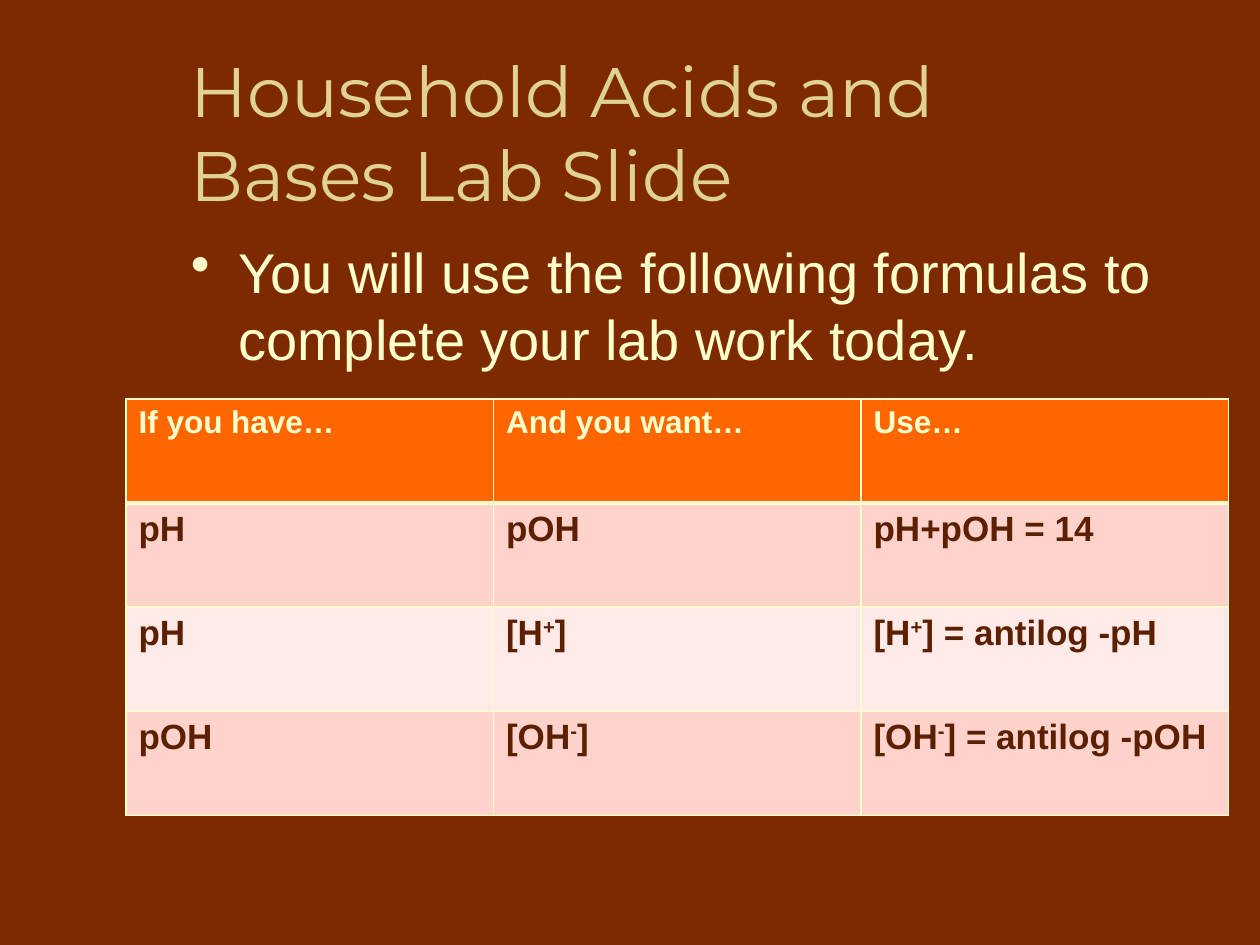
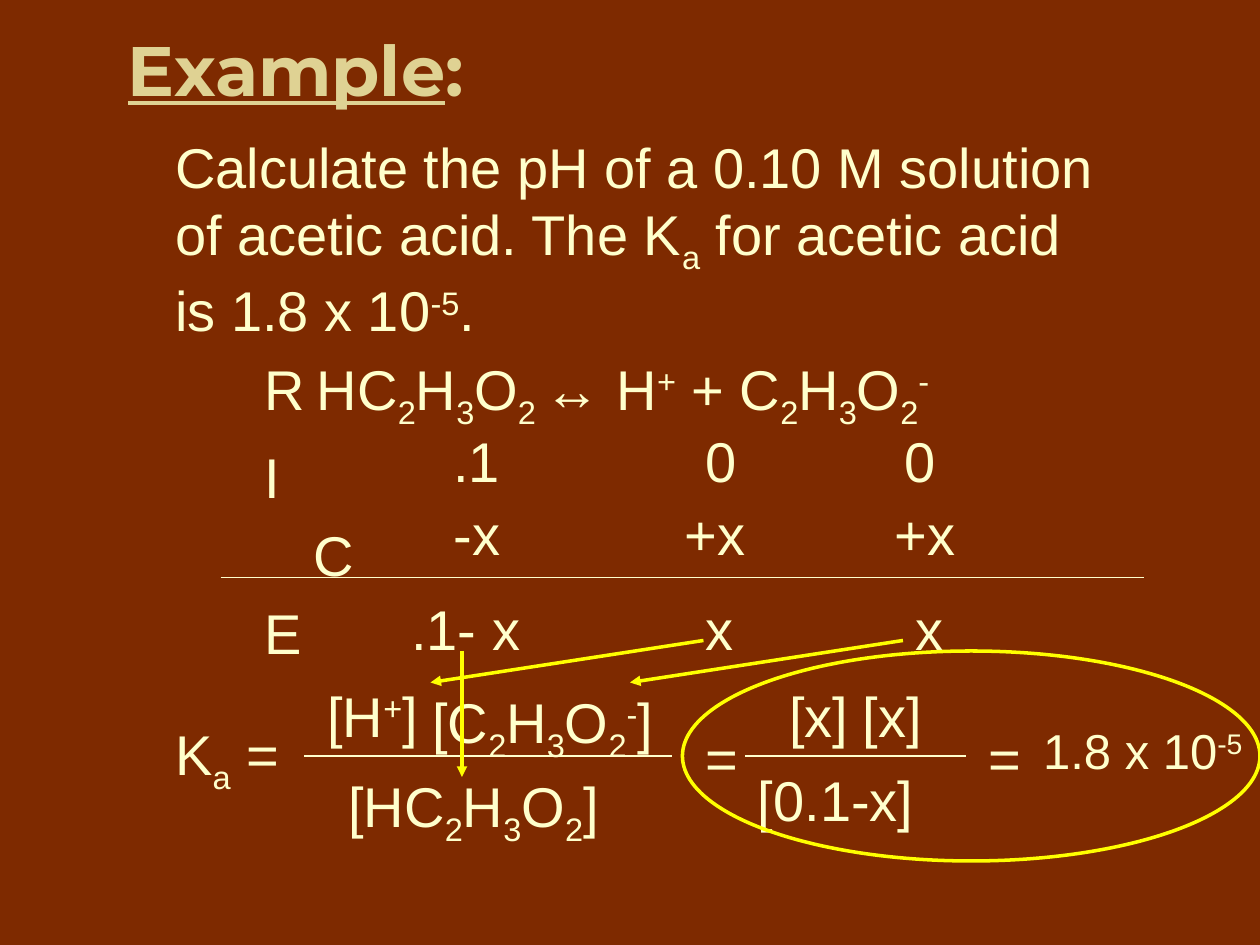
from pptx import Presentation
from pptx.dml.color import RGBColor
from pptx.enum.shapes import MSO_CONNECTOR, MSO_SHAPE
from pptx.enum.text import MSO_ANCHOR
from pptx.oxml.ns import qn
from pptx.util import Pt
from lxml import etree

BACK = RGBColor(0x7E, 0x2A, 0x00)
GOLD = RGBColor(0xDF, 0xD2, 0x93)
CREAM = RGBColor(0xFF, 0xFF, 0xCC)
ORANGE = RGBColor(0xFF, 0x66, 0x00)
ROSE = RGBColor(0xFF, 0xD3, 0xCC)
BLUSH = RGBColor(0xFF, 0xEA, 0xE7)
BROWN = RGBColor(0x5C, 0x1F, 0x00)
YELLOW = RGBColor(0xFF, 0xFF, 0x00)

STRAIGHT = MSO_CONNECTOR.STRAIGHT
OVAL = MSO_SHAPE.OVAL
TOP, MIDDLE = MSO_ANCHOR.TOP, MSO_ANCHOR.MIDDLE
HEAD_FONT, BODY_FONT = "Montserrat", "Arial"
BASE = {"_": "-25000", "^": "30000"}


# Shared parts
def add_slide(deck):
    slide = deck.slides.add_slide(deck.slide_layouts[6])
    slide.background.fill.solid()
    slide.background.fill.fore_color.rgb = BACK
    return slide


def add_sub(parent, tag, **attrs):
    return etree.SubElement(parent, qn(tag), attrs)


def set_font(para, size, color, name=BODY_FONT, bold=False):
    font = para.font
    font.name, font.size, font.bold = name, Pt(size), bold
    font.color.rgb = color


def add_runs(para, text):
    """Parts are split by |; a leading _ lowers a part, ^ raises it."""
    for part in text.split("|"):
        run = para.add_run()
        run.text = part.lstrip("_^")
        if part[0] in BASE:
            run._r.get_or_add_rPr().set("baseline", BASE[part[0]])


def add_box(slide, box, anchor=TOP, wrap=True):
    frame = slide.shapes.add_textbox(*map(Pt, box)).text_frame
    frame.word_wrap = wrap
    frame.vertical_anchor = anchor
    return frame


def add_text(slide, box, text, size=32, space=1.0, wrap=True):
    para = add_box(slide, box, wrap=wrap).paragraphs[0]
    add_runs(para, text)
    para.line_spacing = space
    set_font(para, size, CREAM)


def add_title(slide, box, text, bold=False):
    para = add_box(slide, box, MIDDLE).paragraphs[0]
    add_runs(para, text)
    set_font(para, 40, GOLD, HEAD_FONT, bold)
    return para


def add_line(slide, ends, color=CREAM, width=0.75, arrow=False):
    line = slide.shapes.add_connector(STRAIGHT, *map(Pt, ends))
    line.line.color.rgb = color
    line.line.width = Pt(width)
    if arrow:
        add_sub(line.line._get_or_add_ln(), "a:tailEnd", type="triangle")
    add_sub(line._element.spPr, "a:effectLst")


# Formula table
ROWS = [
    ["If you have…", "And you want…", "Use…"],
    ["pH", "pOH", "pH+pOH = 14"],
    ["pH", "[H|^+|]", "[H|^+|] = antilog -pH"],
    ["pOH", "[OH|^-|]", "[OH|^-|] = antilog -pOH"],
]


def add_edges(cell, row):
    props = cell._tc.get_or_add_tcPr()
    wide = {"T": row == 1, "B": row == 0}
    for side in "LRTB":
        width = Pt(3 if wide.get(side) else 1)
        edge = add_sub(props, f"a:ln{side}", w=str(width))
        fill = add_sub(edge, "a:solidFill")
        add_sub(fill, "a:srgbClr", val=str(CREAM))


def add_grid(slide, box):
    grid = slide.shapes.add_table(len(ROWS), len(ROWS[0]), *map(Pt, box)).table
    for r, row in enumerate(ROWS):
        grid.rows[r].height = Pt(box[3] / len(ROWS))
        for c, text in enumerate(row):
            cell = grid.cell(r, c)
            add_edges(cell, r)
            cell.fill.solid()
            cell.fill.fore_color.rgb = ORANGE if r == 0 else ROSE if r % 2 else BLUSH
            para = cell.text_frame.paragraphs[0]
            add_runs(para, text)
            size, color = (18, CREAM) if r == 0 else (20, BROWN)
            set_font(para, size, color, bold=True)


def lab_slide(deck):
    slide = add_slide(deck)
    add_title(slide, (102, 36, 564, 78), "Household Acids and Bases Lab Slide")
    para = add_box(slide, (102, 132, 564, 90)).paragraphs[0]
    add_runs(para, "You will use the following formulas to complete your lab work today.")
    props = para._p.get_or_add_pPr()
    props.set("marL", str(Pt(27)))
    props.set("indent", str(Pt(-27)))
    add_sub(props, "a:buChar", char="•")
    set_font(para, 32, CREAM)
    add_grid(slide, (72, 228, 630, 238))


# Problem text and row letters: text, left margin, first-line indent
STEPS = [
    ("Calculate the pH of a 0.10 M solution of acetic acid. The K|_a"
     "| for acetic acid is 1.8 x 10|^-5|.", 27, 0),
    ("R\tHC|_2|H|_3|O|_2 |↔ H|^+| + C|_2|H|_3|O|_2|^-", 0, 78),
    ("I", 0, 78),
    ("C", 0, 106),
    ("E", 0, 78),
]


def add_steps(slide, box):
    frame = add_box(slide, box)
    for i, (text, left, first) in enumerate(STEPS):
        para = frame.add_paragraph() if i else frame.paragraphs[0]
        add_runs(para, text)
        props = para._p.get_or_add_pPr()
        props.set("marL", str(Pt(left)))
        props.set("indent", str(Pt(first)))
        if "\t" in text:
            tabs = add_sub(props, "a:tabLst")
            add_sub(tabs, "a:tab", pos=str(Pt(146)), algn="l")
        para.space_before = Pt(6.4 if i else 0)
        set_font(para, 32, CREAM)


# Amounts below each formula: top, then (left, text) per column
AMOUNTS = [
    (0, [(24, ".1"), (168, "0"), (282, "0")]),
    (42, [(24, "-x"), (156, "+x"), (276, "+x")]),
    (96, [(0, ".1- x"), (168, "x"), (288, "x")]),
]


def add_amounts(slide, left, top):
    for down, row in AMOUNTS:
        for over, text in row:
            add_text(slide, (left + over, top + down, 100, 45), text)
    add_line(slide, (left - 102, top + 90, left + 426, top + 90))


# Parts of the Ka equation: left, top, width, text
TERMS = [
    (9, 18, 96, "K|_a| ="),
    (96, 0, 72, "[H|^+|]"),
    (156, 0, 156, "[C|_2|H|_3|O|_2|^-|]"),
    (108, 48, 168, "[HC|_2|H|_3|O|_2|]"),
    (312, 24, 42, "="),
    (360, 0, 72, "[x]"),
    (402, 0, 72, "[x]"),
    (342, 48, 114, "[0.1-x]"),
    (474, 24, 42, "="),
]
BARS = [(90, 300), (342, 468)]
ARROWS = [(318, -24, 162, 0), (432, -24, 276, 0), (180, -18, 180, 54)]


def add_ratio(slide, left, top):
    for over, down, width, text in TERMS:
        add_text(slide, (left + over, top + down, width, 45), text, space=0.9)
    add_text(slide, (left + 505, top + 18, 131, 41), "1.8 x 10|^-5", 28, wrap=False)
    for start, end in BARS:
        add_line(slide, (left + start, top + 42, left + end, top + 42))
    for x1, y1, x2, y2 in ARROWS:
        add_line(slide, (left + x1, top + y1, left + x2, top + y2), YELLOW, 2, True)
    ring = slide.shapes.add_shape(OVAL, Pt(left + 306), Pt(top - 18), Pt(330), Pt(120))
    ring.shadow.inherit = False
    ring.fill.background()
    ring.line.color.rgb = YELLOW
    ring.line.width = Pt(2)


def example_slide(deck):
    slide = add_slide(deck)
    title = add_title(slide, (66, 0, 564, 78), "Example|:", bold=True)
    title.runs[0].font.underline = True
    add_steps(slide, (66, 72, 570, 378))
    add_amounts(slide, 228, 240)
    add_ratio(slide, 84, 390)


def main():
    deck = Presentation()
    deck.slide_width, deck.slide_height = Pt(720), Pt(540)
    lab_slide(deck)
    example_slide(deck)
    deck.save("out.pptx")


if __name__ == "__main__":
    main()
